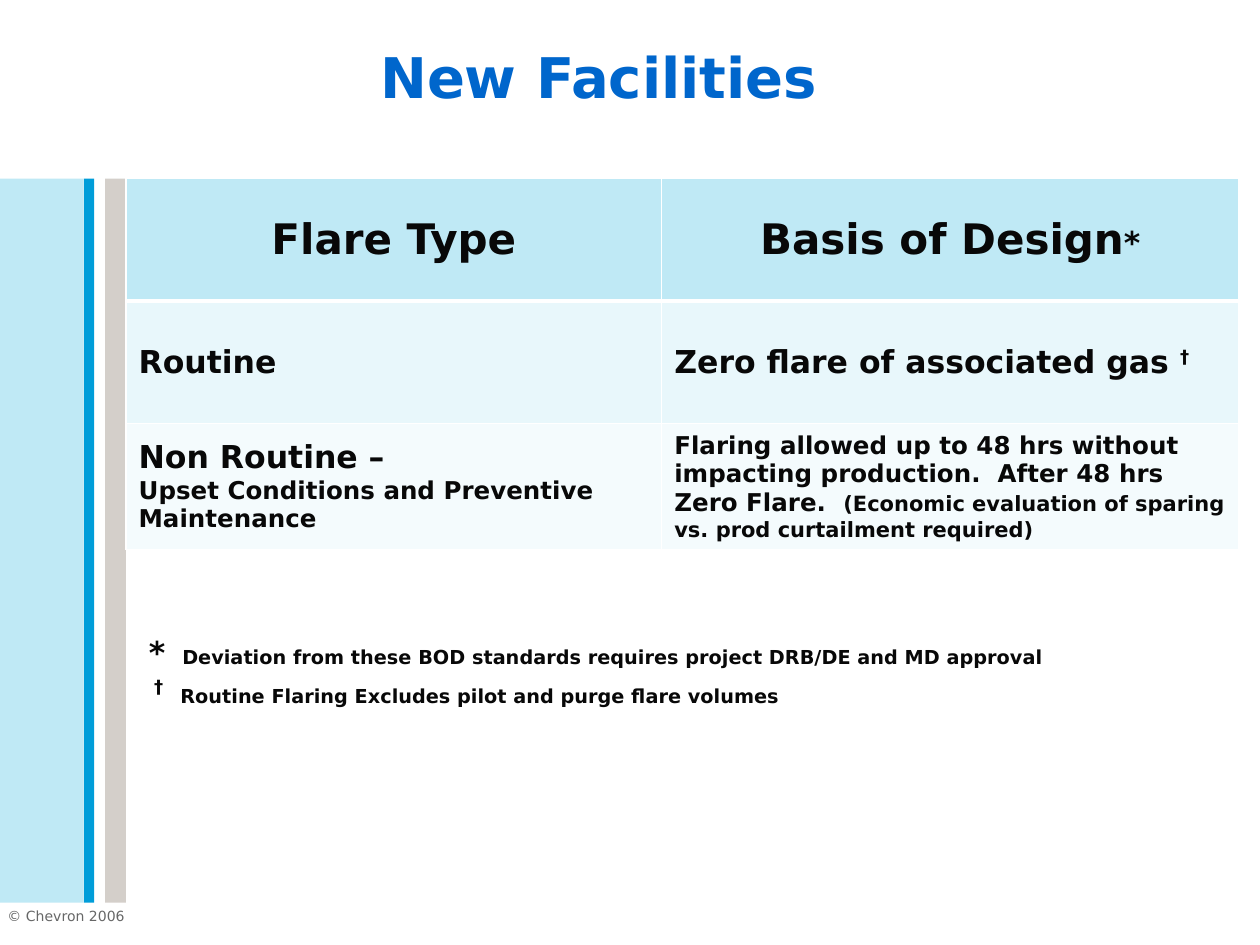
from lxml.etree import SubElement
from pptx import Presentation
from pptx.dml.color import RGBColor
from pptx.enum.shapes import MSO_SHAPE
from pptx.enum.text import MSO_ANCHOR, MSO_AUTO_SIZE, PP_ALIGN
from pptx.oxml.ns import qn
from pptx.util import Cm, Pt

COLORS = {
    "title": "0066CC",
    "text": "080808",
    "copyright": "666767",
    "sky": "BFE9F5",
    "blue": "009DD9",
    "stone": "D4CFCA",
    "routine": "E8F7FB",
    "non_routine": "F4FBFD",
    "border": "FFFFFF",
}


class SlideStyle:
    font = "DejaVu Sans"

    def __init__(self, slide):
        self.slide = slide

    def color(self, name):
        return RGBColor.from_string(COLORS[name])

    def add_runs(self, paragraph, runs, color="text", bold=True):
        for text, size, *baseline in runs:
            run = paragraph.add_run()
            run.text = text
            run.font.name = self.font
            run.font.size = Pt(size)
            run.font.bold = bold
            run.font.color.rgb = self.color(color)
            if baseline:
                run._r.get_or_add_rPr().set("baseline", str(baseline[0] * 1000))

    def title(self, text, size, left, top, width, height):
        title = self.slide.shapes.title
        title.left, title.top, title.width, title.height = map(Cm, (left, top, width, height))
        frame = title.text_frame
        frame.auto_size = MSO_AUTO_SIZE.NONE
        frame.vertical_anchor = MSO_ANCHOR.BOTTOM
        frame.paragraphs[0].alignment = PP_ALIGN.LEFT
        self.add_runs(frame.paragraphs[0], [(text, size)], "title")

    def bar(self, color, left, top, width, height):
        bar = self.slide.shapes.add_shape(MSO_SHAPE.RECTANGLE, *map(Cm, (left, top, width, height)))
        bar.shadow.inherit = False
        bar.fill.solid()
        bar.fill.fore_color.rgb = self.color(color)
        bar.line.fill.background()

    def text(self, runs, left, top, width, height, color="text", bold=True, inset=True):
        box = self.slide.shapes.add_textbox(*map(Cm, (left, top, width, height)))
        frame = box.text_frame
        frame.word_wrap = True
        if not inset:
            frame.margin_left = frame.margin_right = 0
            frame.margin_top = frame.margin_bottom = 0
        self.add_runs(frame.paragraphs[0], runs, color, bold)

    def border(self, cell, side, points):
        line = SubElement(cell._tc.get_or_add_tcPr(), qn(f"a:ln{side}"), w=str(Pt(points)))
        fill = SubElement(line, qn("a:solidFill"))
        SubElement(fill, qn("a:srgbClr"), val=COLORS["border"])

    def table(self, rows, fills, left, top, widths, row_height):
        table = self.slide.shapes.add_table(
            len(rows), len(widths), Cm(left), Cm(top),
            Cm(sum(widths)), Cm(row_height * len(rows))).table
        for column, width in zip(table.columns, widths):
            column.width = Cm(width)
        for r, (row, fill) in enumerate(zip(rows, fills)):
            table.rows[r].height = Cm(row_height)
            for c, paragraphs in enumerate(row):
                cell = table.cell(r, c)
                cell.vertical_anchor = MSO_ANCHOR.MIDDLE
                for side in "LRTB":
                    under_header = (r, side) in ((0, "B"), (1, "T"))
                    self.border(cell, side, 3 if under_header else 1)
                cell.fill.solid()
                cell.fill.fore_color.rgb = self.color(fill)
                frame = cell.text_frame
                for p, runs in enumerate(paragraphs):
                    paragraph = frame.add_paragraph() if p else frame.paragraphs[0]
                    paragraph.alignment = PP_ALIGN.LEFT if r else PP_ALIGN.CENTER
                    self.add_runs(paragraph, runs)


def main():
    deck = Presentation()
    deck.slide_width, deck.slide_height = Cm(25.4), Cm(19.05)
    style = SlideStyle(deck.slides.add_slide(deck.slide_layouts[5]))

    band_top, band_height = 3.6, 14.6
    for color, left, width in (("stone", 2.12, 0.42), ("blue", 1.69, 0.21), ("sky", 0, 1.69)):
        style.bar(color, left, band_top, width, band_height)
    style.text([("© Chevron 2006", 8)], 0.15, 18.29, 2.62, 0.33,
               color="copyright", bold=False, inset=False)

    style.title("New Facilities", 32, 7.41, 0.85, 11.85, 1.48)

    design_basis = [
        [[[("Flare Type", 24)]],
         [[("Basis of Design", 24), ("*", 18)]]],
        [[[("Routine", 18)]],
         [[("Zero flare of associated gas ", 18), ("†", 18, 30)]]],
        [[[("Non Routine –", 18)],
          [("Upset Conditions and Preventive Maintenance", 14)]],
         [[("Flaring allowed up to 48 hrs without impacting production.  "
            "After 48 hrs Zero Flare.  ", 14),
           ("(Economic evaluation of sparing vs. prod curtailment required)", 12)]]],
    ]
    style.table(design_basis, ("sky", "routine", "non_routine"),
                2.54, band_top, (10.8, 11.63), 2.47)

    footnotes = (
        (("*", 18), "Deviation from these BOD standards requires project DRB/DE and MD approval",
         2.75, 12.28),
        (("†", 18, 30), "Routine Flaring Excludes pilot and purge flare volumes", 2.86, 13.06),
    )
    for mark, note, left, top in footnotes:
        style.text([mark, (" ", 28), (note, 11)], left, top, 19.25, 1.45)

    deck.save("out.pptx")


if __name__ == "__main__":
    main()
